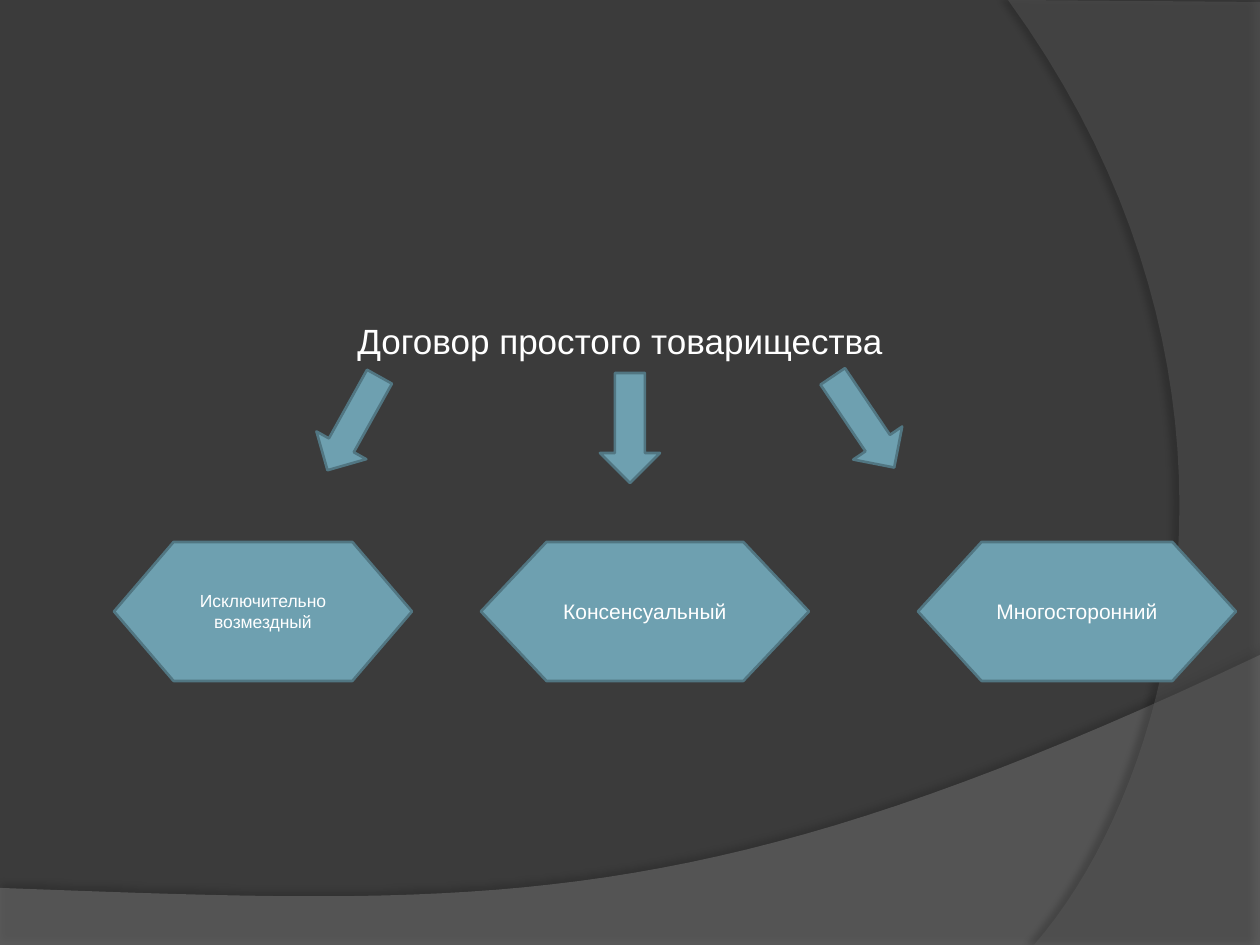
from lxml import etree
from pptx import Presentation
from pptx import util as u
from pptx.dml.color import RGBColor
from pptx.enum import shapes, text
from pptx.oxml.ns import qn

# Content: lengths in px, 126 px to the inch
COLORS = {"back": "3B3B3B", "lower": "7F7F7F", "right": "5E5E5E",
          "fill": "6EA0B0", "edge": "517682", "text": "FFFFFF", "shadow": "000000"}
HEADING = ("Договор простого товарищества", (320, 310, 600, 62), 20)
FEATURES = [  # wording, left, width, point size
    ("Исключительно возмездный", 114, 298, 10),
    ("Консенсуальный", 481, 328, 12),
    ("Многосторонний", 918, 318, 12),
]
FEATURE_TOP, FEATURE_HEIGHT = 542, 139
ARROWS = [  # left, top, width, height, rotation
    (600, 373, 60, 110, 0),
    (325, 370, 57, 107, 29.1),
    (834, 367, 59, 110, 326),
]
# Each wave: straight points, the curve's four control points,
# then colour, opacity and shadow (opacity %, blur pt, distance pt, degrees)
WAVES = [
    ([(0, 945), (1260, 945)], [(1260, 655), (704, 919), (493, 906), (0, 888)],
     "lower", 45, (35, 4, 3.5, 270)),
    ([(1260, 2), (1260, 945)], [(1034, 945), (1178, 780), (1283, 378), (1008, 0)],
     "right", 40, (45, 4, 4, 180)),
]
CURVE_STEPS = 40
FRAME = {"word_wrap": True, "vertical_anchor": text.MSO_ANCHOR.MIDDLE}


def px(value):
    return u.Emu(round(value * 914400 / 126))


def color(name):
    return RGBColor.from_string(COLORS[name])


def paint(shape, fill, edge=None):
    shape.shadow.inherit = False
    shape.fill.solid()
    shape.fill.fore_color.rgb = color(fill)
    if edge:
        shape.line.color.rgb = color(edge)
        shape.line.width = u.Pt(1.5)
    else:
        shape.line.fill.background()


def write(shape, wording, size):
    frame = shape.text_frame
    for name, value in FRAME.items():
        setattr(frame, name, value)
    frame.text = wording
    paragraph = frame.paragraphs[0]
    paragraph.alignment = text.PP_ALIGN.CENTER
    style = {"name": "Arial", "size": u.Pt(size), "bold": False}
    for name, value in style.items():
        setattr(paragraph.font, name, value)
    paragraph.font.color.rgb = color("text")


def set_alpha(parent, percent):
    etree.SubElement(parent, qn("a:alpha"), val=str(percent * 1000))


def cast_shadow(shape, opacity, blur, distance, angle):
    effects = shape.element.spPr.find(qn("a:effectLst"))
    shadow = etree.SubElement(effects, qn("a:outerShdw"), blurRad=str(u.Pt(blur)),
                              dist=str(u.Pt(distance)), dir=str(angle * 60000))
    tint = etree.SubElement(shadow, qn("a:srgbClr"), val=COLORS["shadow"])
    set_alpha(tint, opacity)


def bezier(controls):
    for step in range(CURVE_STEPS + 1):
        t = step / CURVE_STEPS
        weights = ((1 - t) ** 3, 3 * t * (1 - t) ** 2, 3 * t * t * (1 - t), t ** 3)
        yield tuple(sum(w * c[axis] for w, c in zip(weights, controls))
                    for axis in (0, 1))


deck = Presentation()
deck.slide_width, deck.slide_height = px(1260), px(945)
slide = deck.slides.add_slide(deck.slide_layouts[5])
slide.background.fill.solid()
slide.background.fill.fore_color.rgb = color("back")

# Translucent waves
for straight, curve, fill, opacity, shadow in WAVES:
    outline = [(px(x), px(y)) for x, y in [*straight, *bezier(curve)]]
    builder = slide.shapes.build_freeform(*outline[0])
    builder.add_line_segments(outline[1:], close=True)
    wave = builder.convert_to_shape()
    paint(wave, fill)
    set_alpha(wave.element.spPr.find(qn("a:solidFill"))[0], opacity)
    cast_shadow(wave, *shadow)

# Heading, brought in front of the waves
wording, box, size = HEADING
heading = slide.shapes.title
for side, value in zip(("left", "top", "width", "height"), box):
    setattr(heading, side, px(value))
write(heading, wording, size)
slide.shapes.element.append(heading.element)

# Arrows to the features
for *box, rotation in ARROWS:
    arrow = slide.shapes.add_shape(shapes.MSO_SHAPE.DOWN_ARROW, *map(px, box))
    arrow.rotation = rotation
    paint(arrow, "fill", "edge")

# Features of the contract
for wording, left, width, size in FEATURES:
    feature = slide.shapes.add_shape(
        shapes.MSO_SHAPE.FLOWCHART_PREPARATION,
        *map(px, (left, FEATURE_TOP, width, FEATURE_HEIGHT)))
    paint(feature, "fill", "edge")
    write(feature, wording, size)

deck.save("out.pptx")
